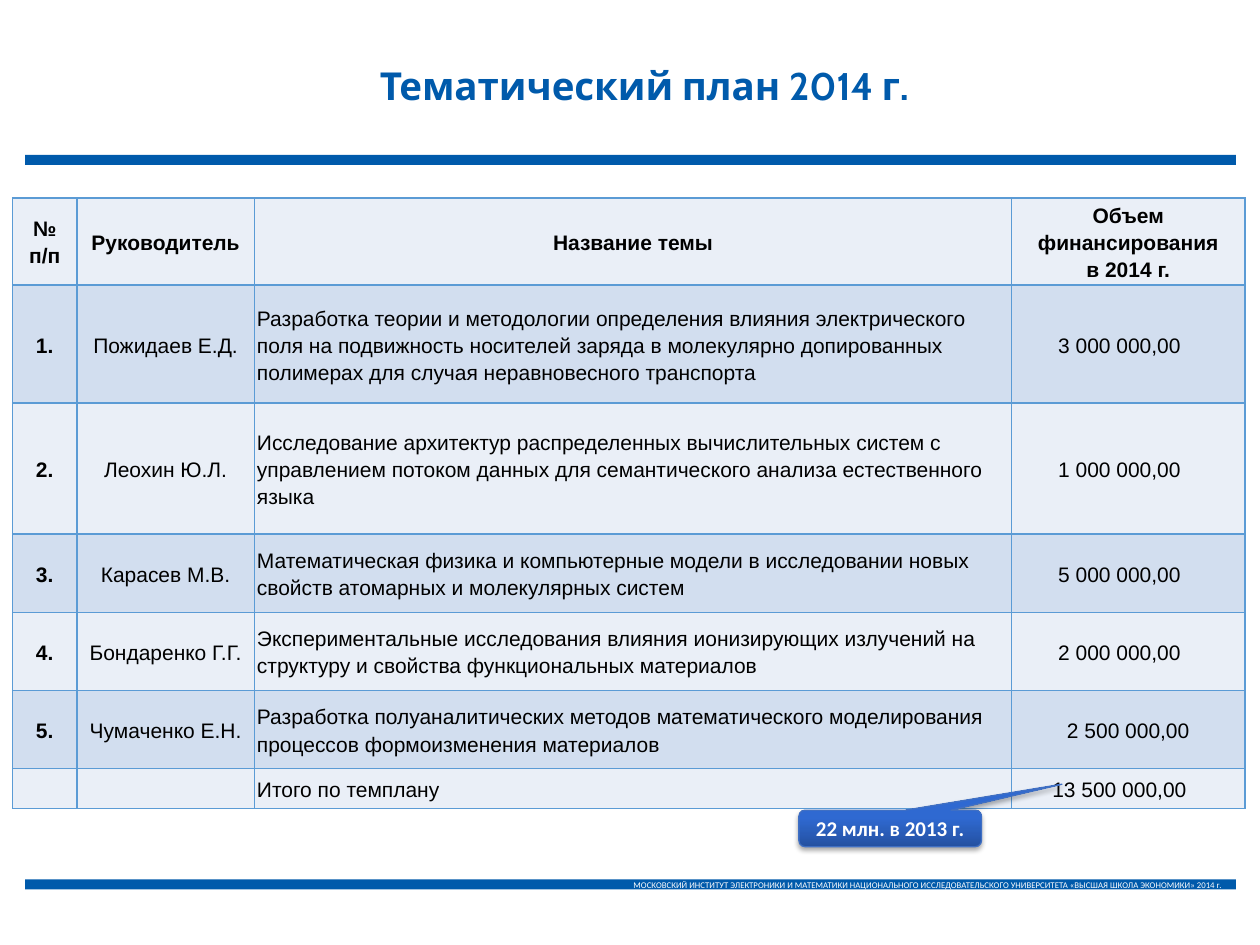
import pptx
import pptx.dml.color
import pptx.enum.shapes
import pptx.enum.text
import pptx.oxml
import pptx.oxml.ns
import pptx.util

Inches = pptx.util.Inches
Pt = pptx.util.Pt
RGBColor = pptx.dml.color.RGBColor
Align = pptx.enum.text.PP_ALIGN
Anchor = pptx.enum.text.MSO_ANCHOR
Shape = pptx.enum.shapes.MSO_SHAPE

BLUE = RGBColor(0x00, 0x5A, 0xAB)
WHITE = RGBColor(0xFF, 0xFF, 0xFF)
BLACK = RGBColor(0x00, 0x00, 0x00)
LIGHT_ROW = RGBColor(0xEA, 0xEF, 0xF7)
DARK_ROW = RGBColor(0xD2, 0xDE, 0xEF)
BORDER = RGBColor(0x5B, 0x9B, 0xD5)
CALLOUT_LINE = RGBColor(0x3F, 0x6F, 0xC3)
CALLOUT_BOTTOM = RGBColor(0x24, 0x51, 0xA1)
CALLOUT_TOP = RGBColor(0x2F, 0x69, 0xD1)

TITLE_FONT = {"name": "Cabin", "size": Pt(22), "bold": True}
FOOTER_FONT = {"name": "Calibri", "size": Pt(5), "bold": False}
CALLOUT_FONT = {"name": "Calibri", "size": Pt(12), "bold": True}
CELL_FONT = {"name": "Arial", "size": Pt(12), "bold": False}
HEADER_FONT = {**CELL_FONT, "bold": True}

FOOTER = (
    "МОСКОВСКИЙ ИНСТИТУТ ЭЛЕКТРОНИКИ И МАТЕМАТИКИ НАЦИОНАЛЬНОГО "
    "ИССЛЕДОВАТЕЛЬСКОГО УНИВЕРСИТЕТА «ВЫСШАЯ ШКОЛА ЭКОНОМИКИ» 2014 г."
)
COLUMN_WIDTHS = [0.51, 1.41, 6.01, 1.85]
ROW_HEIGHTS = [0.64, 0.94, 1.04, 0.62, 0.62, 0.62, 0.32]
ROWS = [
    ["№ п/п", "Руководитель", "Название темы", "Объем финансирования\vв 2014 г."],
    ["1.", "Пожидаев Е.Д.",
     "Разработка теории и методологии определения влияния электрического поля на "
     "подвижность носителей заряда в молекулярно допированных полимерах для случая "
     "неравновесного транспорта", "3 000 000,00"],
    ["2.", "Леохин Ю.Л.",
     "Исследование архитектур распределенных вычислительных систем с управлением "
     "потоком данных для семантического анализа естественного языка", "1 000 000,00"],
    ["3.", "Карасев М.В.",
     "Математическая физика и компьютерные модели в исследовании новых свойств "
     "атомарных и молекулярных систем", "5 000 000,00"],
    ["4.", "Бондаренко Г.Г.",
     "Экспериментальные исследования влияния ионизирующих излучений на структуру и "
     "свойства функциональных материалов", "2 000 000,00"],
    ["5.", "Чумаченко Е.Н.",
     "Разработка полуаналитических методов математического моделирования процессов "
     "формоизменения материалов", "2 500 000,00"],
    ["", "", "Итого по темплану", "13 500 000,00"],
]
CENTRED_AMOUNT_ROW = 5


def write_text(frame, text, values, color, align):
    """Put one formatted paragraph into a text frame and return it."""
    frame.text = text
    frame.word_wrap = True
    para = frame.paragraphs[0]
    para.alignment = align
    for span in para.runs:
        for name, value in values.items():
            setattr(span.font, name, value)
        span.font.color.rgb = color
    return para


def add_title(page, box):
    """Place the slide title in its placeholder."""
    title = page.shapes.title
    title.left, title.top, title.width, title.height = box
    write_text(title.text_frame, "Тематический план 2014 г.", TITLE_FONT, BLUE, Align.CENTER)
    title.text_frame.vertical_anchor = Anchor.TOP
    title.text_frame.auto_size = pptx.enum.text.MSO_AUTO_SIZE.SHAPE_TO_FIT_TEXT


def add_bar(page, box, text=""):
    """Draw a blue rule with optional small text at its right end."""
    bar = page.shapes.add_shape(Shape.RECTANGLE, *box)
    bar.shadow.inherit = False
    bar.fill.solid()
    bar.fill.fore_color.rgb = BLUE
    bar.line.fill.background()
    if text:
        write_text(bar.text_frame, text, FOOTER_FONT, WHITE, Align.RIGHT)
        bar.text_frame.vertical_anchor = Anchor.MIDDLE


def add_borders(cell):
    """Outline a table cell on all four sides."""
    properties = cell._tc.get_or_add_tcPr()
    for side in ("lnL", "lnR", "lnT", "lnB"):
        properties.append(pptx.oxml.parse_xml(
            f'<a:{side} {pptx.oxml.ns.nsdecls("a")} w="{Pt(1)}"><a:solidFill>'
            f'<a:srgbClr val="{BORDER}"/></a:solidFill></a:{side}>'
        ))


def format_cell(cell, text, row, column):
    """Fill a cell with text styled by its row and column."""
    add_borders(cell)
    cell.fill.solid()
    cell.fill.fore_color.rgb = DARK_ROW if row % 2 else LIGHT_ROW
    shifted = column == 3 and row not in (0, CENTRED_AMOUNT_ROW)
    layout = {
        "margin_left": Inches(0.02),
        "margin_right": Inches(0.16 if shifted else 0.02),
        "margin_top": 0,
        "margin_bottom": 0,
        "vertical_anchor": Anchor.MIDDLE,
    }
    for name, value in layout.items():
        setattr(cell, name, value)
    values = HEADER_FONT if row == 0 or column == 0 else CELL_FONT
    align = Align.LEFT if column == 2 and row else Align.CENTER
    para = write_text(cell.text_frame, text, values, BLACK, align)
    para.line_spacing = 1.15


def add_plan_table(page, box):
    """Build the table of research topics and funding."""
    table = page.shapes.add_table(len(ROWS), len(COLUMN_WIDTHS), *box).table
    for column, width in zip(table.columns, COLUMN_WIDTHS):
        column.width = Inches(width)
    for row, height in zip(table.rows, ROW_HEIGHTS):
        row.height = Inches(height)
    for row, texts in enumerate(ROWS):
        for column, text in enumerate(texts):
            format_cell(table.cell(row, column), text, row, column)


def add_callout(page, box):
    """Draw the callout that points at the total."""
    callout = page.shapes.add_shape(Shape.ROUNDED_RECTANGULAR_CALLOUT, *box)
    for index, value in enumerate((0.94, -1.21, 0.17)):
        callout.adjustments[index] = value
    callout.fill.gradient()
    callout.fill.gradient_angle = 90
    stops = zip(callout.fill.gradient_stops, (0, 0.8), (CALLOUT_BOTTOM, CALLOUT_TOP))
    for stop, position, color in stops:
        stop.position = position
        stop.color.rgb = color
    callout.line.color.rgb = CALLOUT_LINE
    callout.line.width = Pt(0.75)
    callout.shadow.inherit = False
    effects = callout._element.spPr.find(pptx.oxml.ns.qn("a:effectLst"))
    effects.append(pptx.oxml.parse_xml(
        f'<a:outerShdw {pptx.oxml.ns.nsdecls("a")} blurRad="{Pt(3.1)}" dist="{Pt(1.8)}" '
        'dir="5400000" rotWithShape="0"><a:srgbClr val="000000">'
        '<a:alpha val="35000"/></a:srgbClr></a:outerShdw>'
    ))
    write_text(callout.text_frame, "22 млн. в 2013 г.", CALLOUT_FONT, WHITE, Align.CENTER)
    callout.text_frame.vertical_anchor = Anchor.MIDDLE


def main():
    """Build the thematic plan slide and save the deck."""
    deck = pptx.Presentation()
    deck.slide_width, deck.slide_height = Inches(10), Inches(7.5)
    page = deck.slides.add_slide(deck.slide_layouts[5])
    add_bar(page, (Inches(0.2), Inches(6.98), Inches(9.61), Inches(0.08)), FOOTER)
    add_bar(page, (Inches(0.2), Inches(1.23), Inches(9.61), Inches(0.08)))
    add_plan_table(page, (Inches(0.1), Inches(1.57), Inches(9.78), Inches(4.8)))
    add_callout(page, (Inches(6.34), Inches(6.43), Inches(1.45), Inches(0.29)))
    add_title(page, (Inches(1.53), Inches(0.44), Inches(7.17), Inches(0.47)))
    deck.save("out.pptx")


if __name__ == "__main__":
    main()
